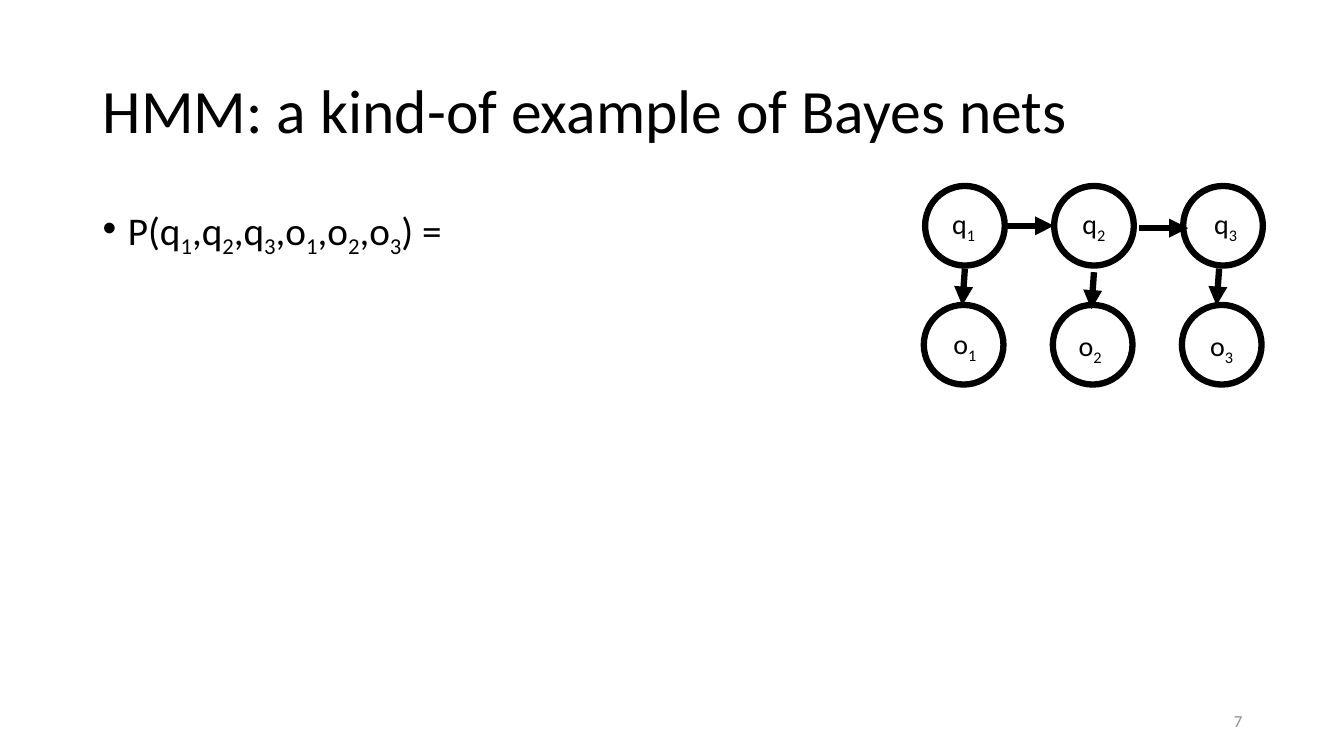
from dataclasses import dataclass
from itertools import groupby

from lxml.etree import SubElement
from pptx import Presentation
from pptx.dml.color import RGBColor
from pptx.enum.shapes import MSO_CONNECTOR, MSO_SHAPE
from pptx.enum.text import MSO_ANCHOR, MSO_AUTO_SIZE, PP_ALIGN
from pptx.oxml.ns import qn
from pptx.util import Inches, Pt

BLACK = RGBColor(0x00, 0x00, 0x00)
GRAY = RGBColor(0x8C, 0x8C, 0x8C)
FONT = "Calibri"

# The network grid: the centre of q1 is column 0, row 0 (inches)
GRID_LEFT, GRID_TOP = 9.57, 2.24
COLUMN, ROW = 1.28, 1.18
NODE_SIZE, LABEL_SIZE = 0.79, 0.44
STROKE = Pt(4.5)


@dataclass(frozen=True)
class Point:
    column: float
    row: float

    @property
    def left(self) -> float:
        return GRID_LEFT + self.column * COLUMN

    @property
    def top(self) -> float:
        return GRID_TOP + self.row * ROW


@dataclass(frozen=True)
class Node:
    text: str
    center: Point
    label: Point


@dataclass(frozen=True)
class Arrow:
    start: Point
    end: Point


NODES = [
    Node("q1", Point(0, 0), Point(-0.01, -0.02)),
    Node("q2", Point(1, 0), Point(1, -0.02)),
    Node("q3", Point(2, 0), Point(2.02, -0.02)),
    Node("o1", Point(-0.01, 1), Point(0, 0.99)),
    Node("o2", Point(0.99, 1), Point(0.97, 1.01)),
    Node("o3", Point(1.99, 1), Point(1.99, 1.01)),
]
TRANSITIONS = [
    Arrow(Point(0.31, 0), Point(0.69, 0)),
    Arrow(Point(1.35, 0.02), Point(1.73, 0.02)),
]
EMISSIONS = [
    Arrow(Point(column, row), Point(column - 0.02, row + 0.31))
    for column, row in [(0, 0.36), (1, 0.39), (1.97, 0.36)]
]


def set_font(para, size: float, color: RGBColor = BLACK) -> None:
    para.font.name = FONT
    para.font.size = Pt(size)
    para.font.color.rgb = color


def write_subscripted(para, text: str) -> None:
    """Write text with every digit lowered to a subscript."""
    for lowered, letters in groupby(text, str.isdigit):
        span = para.add_run()
        span.text = "".join(letters)
        if lowered:
            span._r.get_or_add_rPr().set("baseline", "-25000")


def add_box(page, left: float, top: float, width: float, height: float):
    return page.shapes.add_textbox(Inches(left), Inches(top), Inches(width), Inches(height))


def add_title(page, text: str) -> None:
    title = page.shapes.title
    title.left, title.top = Inches(0.92), Inches(0.4)
    title.width, title.height = Inches(11.5), Inches(1.45)
    frame = title.text_frame
    frame.text = text
    frame.vertical_anchor = MSO_ANCHOR.MIDDLE
    para = frame.paragraphs[0]
    para.alignment = PP_ALIGN.LEFT
    para.line_spacing = 0.9
    set_font(para, 44)


def add_bullet(page, text: str) -> None:
    frame = add_box(page, 0.92, 2, 7.73, 4.76).text_frame
    frame.word_wrap = True
    para = frame.paragraphs[0]
    para.line_spacing = 0.9
    para.space_before = Pt(10)
    properties = para._p.get_or_add_pPr()
    properties.set("marL", str(Inches(0.25)))
    properties.set("indent", str(-Inches(0.25)))
    SubElement(properties, qn("a:buFont"), typeface="Arial")
    SubElement(properties, qn("a:buChar"), char="•")
    set_font(para, 28)
    write_subscripted(para, text)


def add_circle(page, node: Node) -> None:
    circle = page.shapes.add_shape(
        MSO_SHAPE.OVAL,
        Inches(node.center.left - NODE_SIZE / 2),
        Inches(node.center.top - NODE_SIZE / 2),
        Inches(NODE_SIZE),
        Inches(NODE_SIZE),
    )
    circle.shadow.inherit = False
    circle.fill.background()
    circle.line.color.rgb = BLACK
    circle.line.width = STROKE


def add_label(page, node: Node) -> None:
    box = add_box(page, node.label.left - LABEL_SIZE / 2,
                  node.label.top - LABEL_SIZE / 2, LABEL_SIZE, LABEL_SIZE)
    frame = box.text_frame
    frame.word_wrap = False
    frame.auto_size = MSO_AUTO_SIZE.SHAPE_TO_FIT_TEXT
    para = frame.paragraphs[0]
    para.alignment = PP_ALIGN.CENTER
    set_font(para, 20)
    write_subscripted(para, node.text)


def add_arrow(page, arrow: Arrow) -> None:
    connector = page.shapes.add_connector(
        MSO_CONNECTOR.STRAIGHT,
        Inches(arrow.start.left), Inches(arrow.start.top),
        Inches(arrow.end.left), Inches(arrow.end.top),
    )
    connector.line.color.rgb = BLACK
    connector.line.width = STROKE
    SubElement(connector.line._get_or_add_ln(), qn("a:tailEnd"), type="triangle")
    SubElement(connector._element.spPr, qn("a:effectLst"))


def add_page_number(page, number: str) -> None:
    frame = add_box(page, 9.42, 6.95, 3, 0.4).text_frame
    frame.word_wrap = True
    frame.vertical_anchor = MSO_ANCHOR.MIDDLE
    para = frame.paragraphs[0]
    para.text = number
    para.alignment = PP_ALIGN.RIGHT
    set_font(para, 12, GRAY)


def main() -> None:
    deck = Presentation()
    deck.slide_width, deck.slide_height = Inches(13.33), Inches(7.5)
    page = deck.slides.add_slide(deck.slide_layouts.get_by_name("Title Only"))

    add_title(page, "HMM: a kind-of example of Bayes nets")
    add_bullet(page, "P(q1,q2,q3,o1,o2,o3) =")
    for node in NODES:
        add_circle(page, node)
    for arrow in TRANSITIONS + EMISSIONS:
        add_arrow(page, arrow)
    for node in NODES:
        add_label(page, node)
    add_page_number(page, "7")
    deck.save("out.pptx")


if __name__ == "__main__":
    main()
